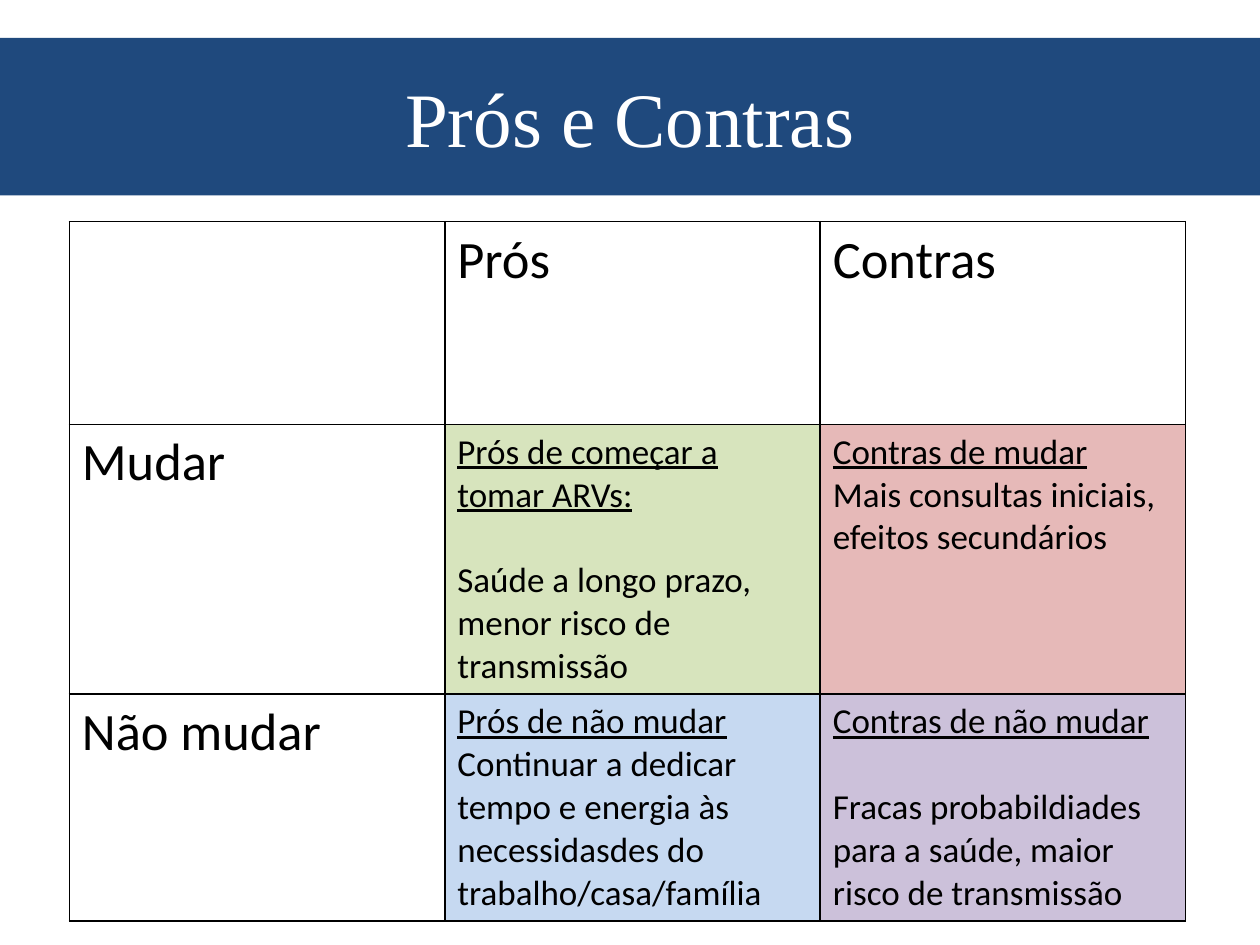
from pptx import Presentation
from pptx.dml.color import RGBColor
from pptx.enum.shapes import MSO_SHAPE
from pptx.enum.text import MSO_ANCHOR, PP_ALIGN
from pptx.oxml import parse_xml
from pptx.oxml.ns import nsdecls
from pptx.util import Inches, Pt

RECT = MSO_SHAPE.RECTANGLE
MIDDLE = MSO_ANCHOR.MIDDLE
CENTER = PP_ALIGN.CENTER

BLACK, WHITE, NAVY = "000000", "FFFFFF", "1F497D"
HEADING = {"name": "Calibri", "size": Pt(30)}
BODY = {"name": "Calibri", "size": Pt(20)}
TITLE = {"name": "Times New Roman", "size": Pt(44)}
BLANK_LINE = Pt(24.4)

COL_WIDTHS = (2.98, 2.98, 2.9)
ROW_HEIGHTS = (1.61, 2.14, 1.8)
COLUMN_HEADINGS = ("Prós", "Contras")
# Row heading, then for each cell: fill, subheading, text, gap between them
ROWS = (
    ("Mudar", (
        ("D7E4BD", "Prós de começar a tomar ARVs:",
         "Saúde a longo prazo, menor risco de transmissão", BLANK_LINE),
        ("E6B9B8", "Contras de mudar",
         "Mais consultas iniciais, efeitos secundários", 0),
    )),
    ("Não mudar", (
        ("C6D9F1", "Prós de não mudar",
         "Continuar a dedicar tempo e energia às necessidasdes do "
         "trabalho/casa/família", 0),
        ("CCC1DA", "Contras de não mudar",
         "Fracas probabildiades para a saúde, maior risco de transmissão",
         BLANK_LINE),
    )),
)


def rgb(value):
    return RGBColor.from_string(value)


def paint(fill, color):
    fill.solid()
    fill.fore_color.rgb = rgb(color)


def add_text(p, text, style, color=BLACK):
    r = p.add_run()
    r.text = text
    for name, value in style.items():
        setattr(r.font, name, value)
    r.font.color.rgb = rgb(color)


def add_borders(cell):
    """Put the four border lines ahead of the cell's fill, as the schema asks."""
    tc_pr = cell._tc.get_or_add_tcPr()
    for i, side in enumerate(("lnL", "lnR", "lnT", "lnB")):
        tc_pr.insert(i, parse_xml(
            f'<a:{side} {nsdecls("a")} w="{Pt(1)}"><a:solidFill>'
            f'<a:srgbClr val="{BLACK}"/></a:solidFill></a:{side}>'))


def add_title_band(slide, left, top, width, height):
    band = slide.shapes.add_shape(RECT, left, top, width, height)
    band.shadow.inherit = False
    paint(band.fill, NAVY)
    band.line.fill.background()
    tf = band.text_frame
    tf.word_wrap = True
    tf.vertical_anchor = MIDDLE
    p = tf.paragraphs[0]
    p.alignment = CENTER
    add_text(p, "Prós e Contras", TITLE, WHITE)


def add_decision_table(slide, left, top, width, height):
    table = slide.shapes.add_table(
        len(ROW_HEIGHTS), len(COL_WIDTHS), left, top, width, height).table
    table.first_row = table.horz_banding = False
    for column, inches in zip(table.columns, COL_WIDTHS):
        column.width = Inches(inches)
    for row, inches in zip(table.rows, ROW_HEIGHTS):
        row.height = Inches(inches)
    for cell in table.iter_cells():
        paint(cell.fill, WHITE)
        add_borders(cell)

    for col, heading in enumerate(COLUMN_HEADINGS, 1):
        add_text(table.cell(0, col).text_frame.paragraphs[0], heading, HEADING)
    for row, (heading, cells) in enumerate(ROWS, 1):
        add_text(table.cell(row, 0).text_frame.paragraphs[0], heading, HEADING)
        for col, (color, subheading, text, gap) in enumerate(cells, 1):
            cell = table.cell(row, col)
            paint(cell.fill, color)
            tf = cell.text_frame
            add_text(tf.paragraphs[0], subheading, {**BODY, "underline": True})
            p = tf.add_paragraph()
            p.space_before = gap
            add_text(p, text, BODY)


def main():
    prs = Presentation()
    prs.slide_width, prs.slide_height = Inches(10), Inches(7.5)
    slide = prs.slides.add_slide(prs.slide_layouts[6])
    add_decision_table(slide, Inches(0.55), Inches(1.76),
                       Inches(sum(COL_WIDTHS)), Inches(sum(ROW_HEIGHTS)))
    add_title_band(slide, 0, Inches(0.3), prs.slide_width, Inches(1.25))
    prs.save("out.pptx")


if __name__ == "__main__":
    main()
